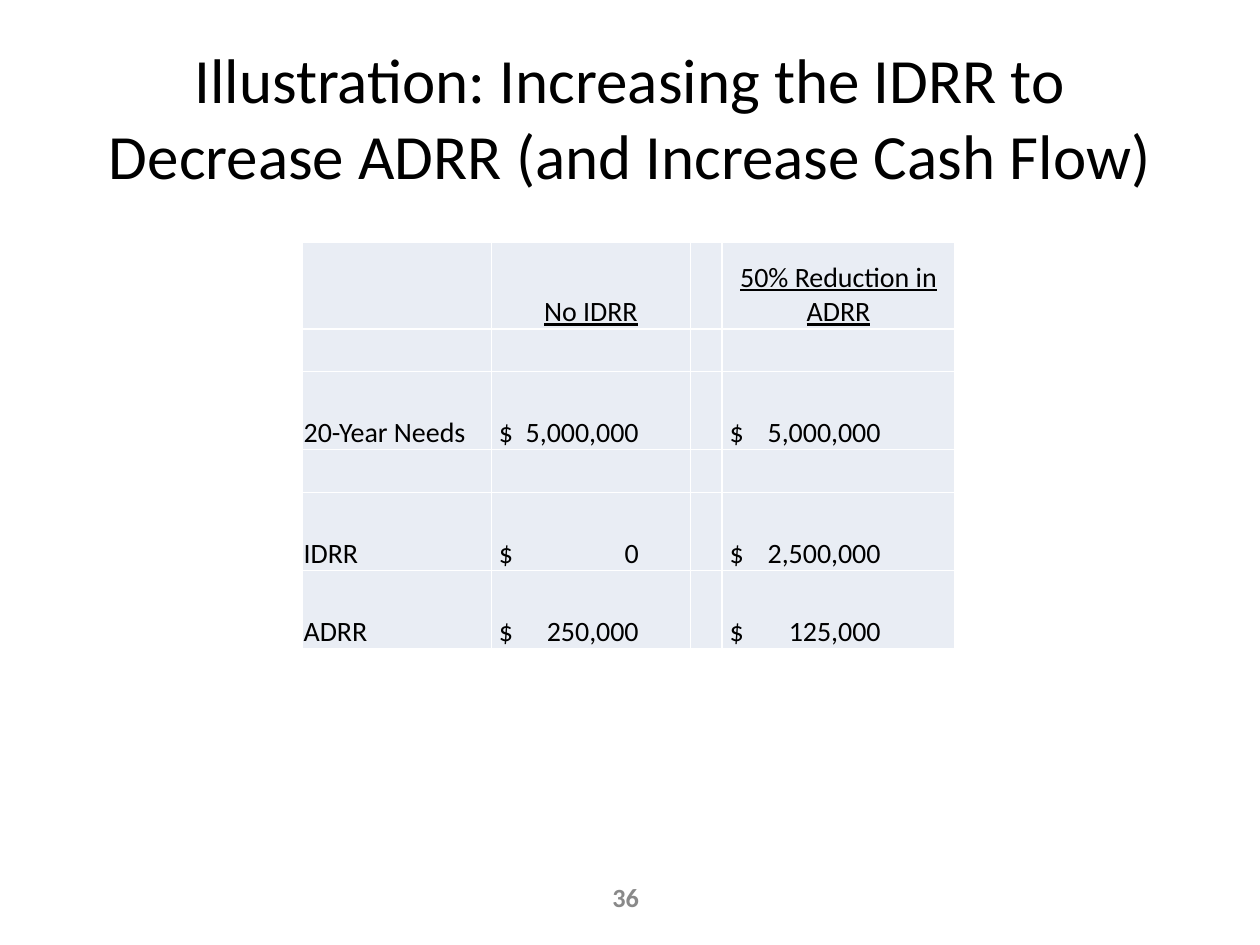
"""Build the slide comparing reserve requirements with and without IDRR."""
from lxml.etree import SubElement
from pptx import Presentation
from pptx.dml.color import RGBColor
from pptx.enum.text import MSO_ANCHOR as Anchor, MSO_AUTO_SIZE as AutoSize, PP_ALIGN as Align
from pptx.oxml.ns import qn
from pptx.util import Inches, Pt

TITLE = "Illustration: Increasing the IDRR to Decrease ADRR (and Increase Cash Flow)"
PAGE_NUMBER = "36"
ROWS = [
    ("", "No IDRR", "", "50% Reduction in ADRR"),
    ("", "", "", ""),
    ("20-Year Needs", "5,000,000", "", "5,000,000"),
    ("", "", "", ""),
    ("IDRR", "0", "", "2,500,000"),
    ("ADRR", "250,000", "", "125,000"),
]
COLUMN_WIDTHS = (1.5, 1.58, 0.25, 1.85)
ROW_HEIGHTS = (0.69, 0.34, 0.62, 0.34, 0.62, 0.62)
AMOUNT_TABS = {1: 1.11, 3: 1.2}
THEME = {
    "font": "Calibri", "text": "000000", "muted": "898989",
    "cell": "E9EDF4", "border": "FFFFFF",
    "title_size": 36, "table_size": 16, "number_size": 15,
}


def write(frame, text, size, color=THEME["text"], align=Align.LEFT, bold=False,
          underline=False, tab=None):
    paragraph = frame.paragraphs[0]
    paragraph.alignment = align
    if tab:
        tabs = SubElement(paragraph._p.get_or_add_pPr(), qn("a:tabLst"))
        SubElement(tabs, qn("a:tab"), pos=str(Inches(tab)), algn="r")
    run = paragraph.add_run()
    run.text = text
    font = run.font
    font.name, font.size = THEME["font"], Pt(size)
    font.bold, font.underline = bold, underline
    font.color.rgb = RGBColor.from_string(color)


def place(shape, left, top, width, height):
    shape.left, shape.top = Inches(left), Inches(top)
    shape.width, shape.height = Inches(width), Inches(height)
    frame = shape.text_frame
    frame.word_wrap = True
    frame.auto_size = AutoSize.NONE
    frame.vertical_anchor = Anchor.MIDDLE
    return frame


def style_cell(cell, left_margin):
    properties = cell._tc.get_or_add_tcPr()
    for side in ("lnL", "lnR", "lnT", "lnB"):
        line = SubElement(properties, qn(f"a:{side}"), w=str(Pt(1)))
        SubElement(SubElement(line, qn("a:solidFill")), qn("a:srgbClr"), val=THEME["border"])
    cell.fill.solid()
    cell.fill.fore_color.rgb = RGBColor.from_string(THEME["cell"])
    cell.vertical_anchor = Anchor.BOTTOM
    cell.margin_left = Inches(left_margin)
    cell.margin_right = cell.margin_top = Inches(0.01)
    cell.margin_bottom = 0


def add_reserve_table(slide):
    table = slide.shapes.add_table(
        len(ROWS), len(COLUMN_WIDTHS), Inches(2.4), Inches(1.92),
        Inches(sum(COLUMN_WIDTHS)), Inches(sum(ROW_HEIGHTS))).table
    table.first_row = table.horz_banding = False
    for column, width in zip(table.columns, COLUMN_WIDTHS):
        column.width = Inches(width)
    for row, height in zip(table.rows, ROW_HEIGHTS):
        row.height = Inches(height)
    for row_index, values in enumerate(ROWS):
        for column_index, value in enumerate(values):
            cell = table.cell(row_index, column_index)
            is_header = row_index == 0
            tab = None if is_header else AMOUNT_TABS.get(column_index)
            style_cell(cell, 0.06 if tab else 0.01)
            if value:
                write(cell.text_frame, f"$\t{value}" if tab else value, THEME["table_size"],
                      align=Align.CENTER if is_header else Align.LEFT,
                      underline=is_header, tab=tab)


def main():
    presentation = Presentation()
    presentation.slide_width, presentation.slide_height = Inches(10), Inches(7.5)
    slide = presentation.slides.add_slide(presentation.slide_layouts[5])
    title = place(slide.shapes.title, 0.5, 0.3, 9, 1.25)
    write(title, TITLE, THEME["title_size"], align=Align.CENTER)
    number_box = slide.shapes.add_textbox(0, 0, 0, 0)
    write(place(number_box, 4.75, 6.92, 0.42, 0.4), PAGE_NUMBER, THEME["number_size"],
          color=THEME["muted"], align=Align.RIGHT, bold=True)
    add_reserve_table(slide)
    presentation.save("out.pptx")


if __name__ == "__main__":
    main()
